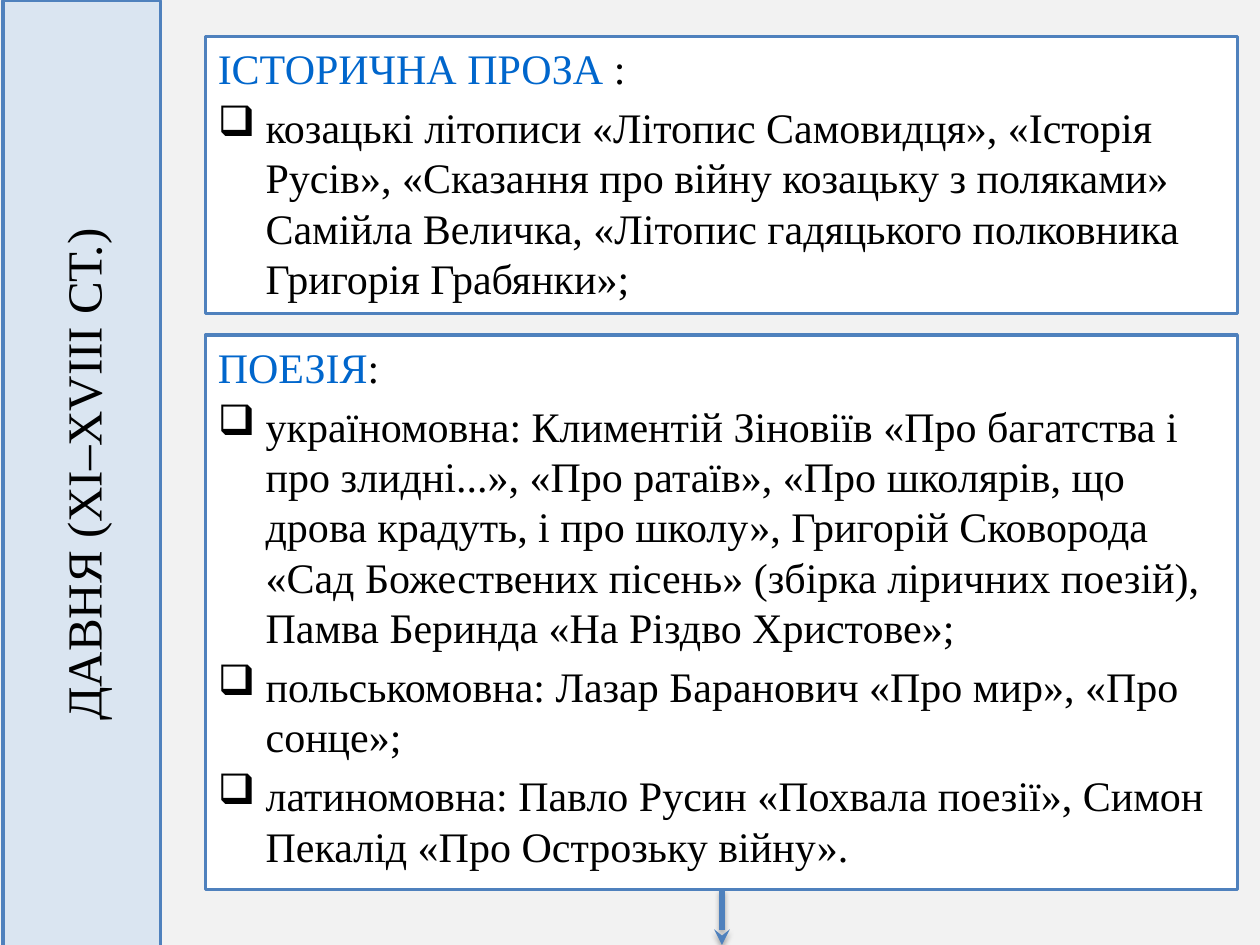
from lxml import etree
from pptx import Presentation, util as u
from pptx.dml.color import RGBColor
from pptx.enum import shapes, text
from pptx.oxml.ns import qn

BLUE, BLACK = "4F81BD", "000000"


def rgb(value):
    return RGBColor.from_string(value)


def add_xml(parent, tag, **attrs):
    return etree.SubElement(parent, qn(tag), attrs)


class SlideBuilder:
    font, heading_color = "Times New Roman", "0066CC"
    indent = u.Inches(0.38)

    def __init__(self, s):
        self.s = s

    def background(self, color):
        fill = self.s.background.fill
        fill.solid()
        fill.fore_color.rgb = rgb(color)

    def box(self, left, top, width, height, color):
        sp = self.s.shapes.add_shape(
            shapes.MSO_SHAPE.RECTANGLE,
            *(u.Inches(v) for v in (left, top, width, height)))
        sp.shadow.inherit = False
        sp.fill.solid()
        sp.fill.fore_color.rgb = rgb(color)
        sp.line.color.rgb = rgb(BLUE)
        sp.line.width = u.Pt(2)
        sp.text_frame.word_wrap = True
        return sp

    def style(self, r, size, color=BLACK):
        r.font.name = self.font
        r.font.size = u.Pt(size)
        r.font.color.rgb = rgb(color)

    def side_title(self, title, left, top, width, height):
        sp = self.box(left, top, width, height, "DAE5F1")
        sp.rotation = 270
        tf = sp.text_frame
        tf.text = title
        tf.vertical_anchor = text.MSO_ANCHOR.MIDDLE
        p = tf.paragraphs[0]
        p.alignment = text.PP_ALIGN.CENTER
        self.style(p.runs[0], 28)

    def bullet(self, p):
        p.space_before = u.Pt(4.8)
        pPr = p._p.get_or_add_pPr()
        pPr.set("marL", str(self.indent))
        pPr.set("indent", str(-self.indent))
        add_xml(add_xml(pPr, "a:buClr"), "a:srgbClr", val=BLACK)
        add_xml(pPr, "a:buChar", char="❑")

    def genre(self, top, height, heading, colon, items):
        tf = self.box(1.63, top, 8.19, height, "FFFFFF").text_frame
        tf.vertical_anchor = text.MSO_ANCHOR.TOP
        p = tf.paragraphs[0]
        p.alignment = text.PP_ALIGN.LEFT
        for words, color in ((heading, self.heading_color), (colon, BLACK)):
            r = p.add_run()
            r.text = words
            self.style(r, 24, color)
        for item in items:
            p = tf.add_paragraph()
            p.text = item
            p.alignment = text.PP_ALIGN.LEFT
            self.bullet(p)
            self.style(p.runs[0], 24)

    def arrow(self, x, top, bottom):
        c = self.s.shapes.add_connector(
            shapes.MSO_CONNECTOR.STRAIGHT,
            u.Inches(x), u.Inches(top), u.Inches(x), u.Inches(bottom))
        c.line.color.rgb = rgb(BLUE)
        c.line.width = u.Pt(3)
        add_xml(c.line._get_or_add_ln(), "a:tailEnd", type="stealth")
        effects = add_xml(c._element.spPr, "a:effectLst")
        shadow = add_xml(effects, "a:outerShdw", blurRad=str(u.Pt(3.1)),
                         dist=str(u.Pt(1.8)), dir="5400000", rotWithShape="0")
        add_xml(add_xml(shadow, "a:srgbClr", val=BLACK), "a:alpha", val="35000")


def main():
    prs = Presentation()
    prs.slide_width, prs.slide_height = u.Inches(10), u.Inches(7.5)
    slide = SlideBuilder(prs.slides.add_slide(prs.slide_layouts[6]))
    slide.background("F2F2F2")

    # Period, reading upwards along the left edge
    slide.side_title("ДАВНЯ (XI–XVIII СТ.)", -3.11, 3.14, 7.52, 1.25)

    # Historical prose
    slide.genre(0.29, 2.2, "ІСТОРИЧНА ПРОЗА ", ":", [
        "козацькі літописи «Літопис Самовидця», «Історія Русів», "
        "«Сказання про війну козацьку з поляками» Самійла Величка, "
        "«Літопис гадяцького полковника Григорія Грабянки»;",
    ])

    # Arrow to the next slide, behind the poetry box
    slide.arrow(5.73, 7.06, 7.5)

    # Poetry
    slide.genre(2.66, 4.4, "ПОЕЗІЯ", ":", [
        "україномовна: Климентій Зіновіїв «Про багатства і про злидні...», "
        "«Про ратаїв», «Про школярів, що дрова крадуть, і про школу», "
        "Григорій Сковорода «Сад Божествених пісень» (збірка ліричних "
        "поезій), Памва Беринда «На Різдво Христове»;",
        "польськомовна: Лазар Баранович «Про мир», «Про сонце»;",
        "латиномовна: Павло Русин «Похвала поезії», Симон Пекалід "
        "«Про Острозьку війну».",
    ])

    prs.save("out.pptx")


if __name__ == "__main__":
    main()
